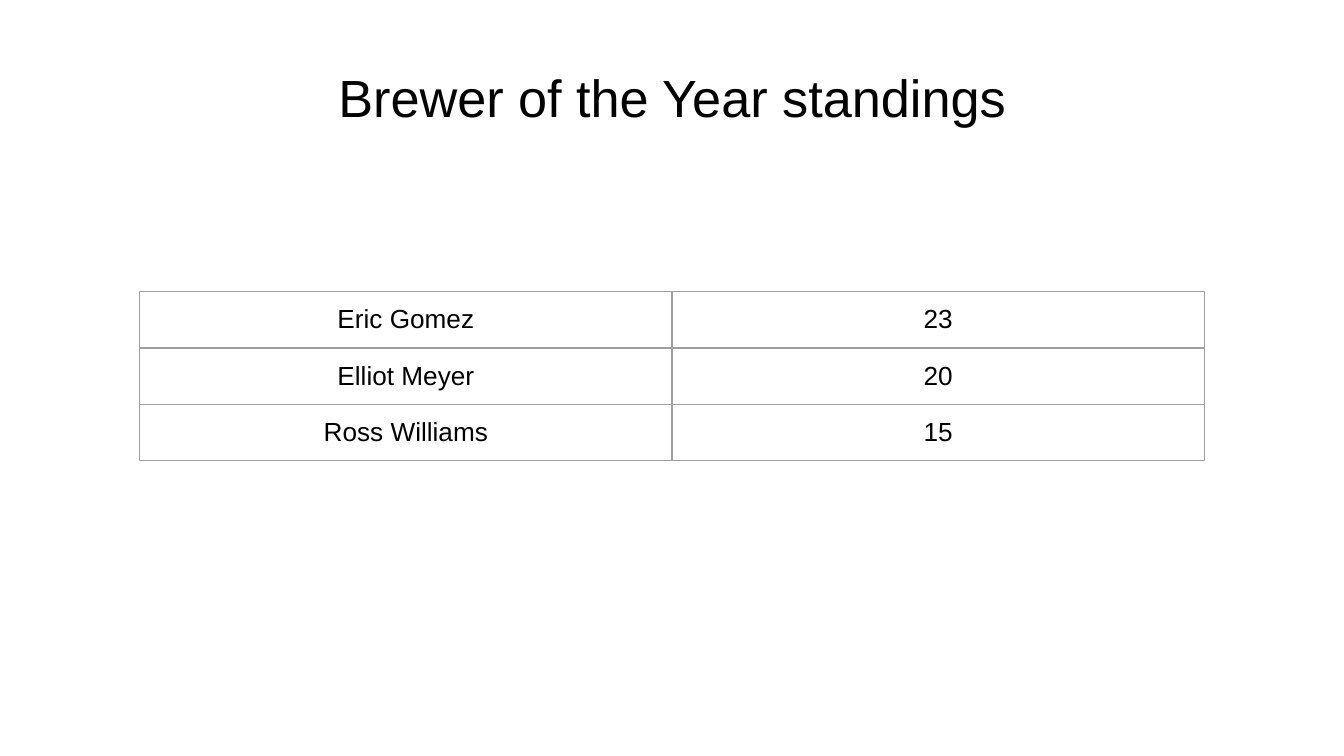
"""Build the Brewer of the Year standings slide."""
from lxml.etree import SubElement
from pptx import Presentation
from pptx.dml.color import RGBColor
from pptx.enum.text import MSO_ANCHOR, MSO_AUTO_SIZE, PP_ALIGN
from pptx.oxml.ns import qn
from pptx.util import Inches, Pt

BLACK = RGBColor(0x00, 0x00, 0x00)
GREY = RGBColor(0x9E, 0x9E, 0x9E)

STANDINGS = [("Eric Gomez", 23), ("Elliot Meyer", 20), ("Ross Williams", 15)]
COLUMN_WIDTH = Inches(3.96)
ROW_HEIGHT = Inches(0.42)
BORDER_WIDTH = Pt(0.75)
MARGINS = ("margin_left", "margin_top", "margin_right", "margin_bottom")
HEADING_FORMAT = {
    "vertical_anchor": MSO_ANCHOR.BOTTOM,
    "auto_size": MSO_AUTO_SIZE.NONE,
    "word_wrap": True,
    **dict.fromkeys(MARGINS, Inches(0.02)),
}
CELL_FORMAT = {
    "vertical_anchor": MSO_ANCHOR.TOP,
    **dict.fromkeys(MARGINS, Inches(0.1)),
}


def apply_format(target, values):
    """Set each attribute in values on target."""
    for attribute, value in values.items():
        setattr(target, attribute, value)


def write_centred(paragraph, text, size):
    """Write black, centred Arial text."""
    paragraph.alignment = PP_ALIGN.CENTER
    run = paragraph.add_run()
    run.text = text
    apply_format(run.font, {"name": "Arial", "size": Pt(size), "bold": False})
    run.font.color.rgb = BLACK


presentation = Presentation()
presentation.slide_width = Inches(10)
presentation.slide_height = presentation.slide_width * 9 // 16
slide = presentation.slides.add_slide(presentation.slide_layouts[5])

heading = slide.shapes.title
heading_width = Inches(8.54)
apply_format(heading, {
    "left": (presentation.slide_width - heading_width) // 2,
    "top": Inches(0.03),
    "width": heading_width,
    "height": Inches(0.94),
})
apply_format(heading.text_frame, HEADING_FORMAT)
write_centred(heading.text_frame.paragraphs[0], "Brewer of the Year standings", 28)

standings_width = 2 * COLUMN_WIDTH
standings = slide.shapes.add_table(
    len(STANDINGS), 2,
    (presentation.slide_width - standings_width) // 2, Inches(2.17),
    standings_width, len(STANDINGS) * ROW_HEIGHT,
).table
apply_format(standings, {"first_row": False, "horz_banding": False})

for row, entry in zip(standings.rows, STANDINGS):
    row.height = ROW_HEIGHT
    for cell, value in zip(row.cells, entry):
        apply_format(cell, CELL_FORMAT)
        write_centred(cell.text_frame.paragraphs[0], str(value), 14)
        properties = cell._tc.get_or_add_tcPr()
        for side in ("a:lnL", "a:lnR", "a:lnT", "a:lnB"):
            border = SubElement(properties, qn(side), w=str(BORDER_WIDTH))
            border_fill = SubElement(border, qn("a:solidFill"))
            SubElement(border_fill, qn("a:srgbClr"), val=str(GREY))
        cell.fill.background()

presentation.save("out.pptx")
